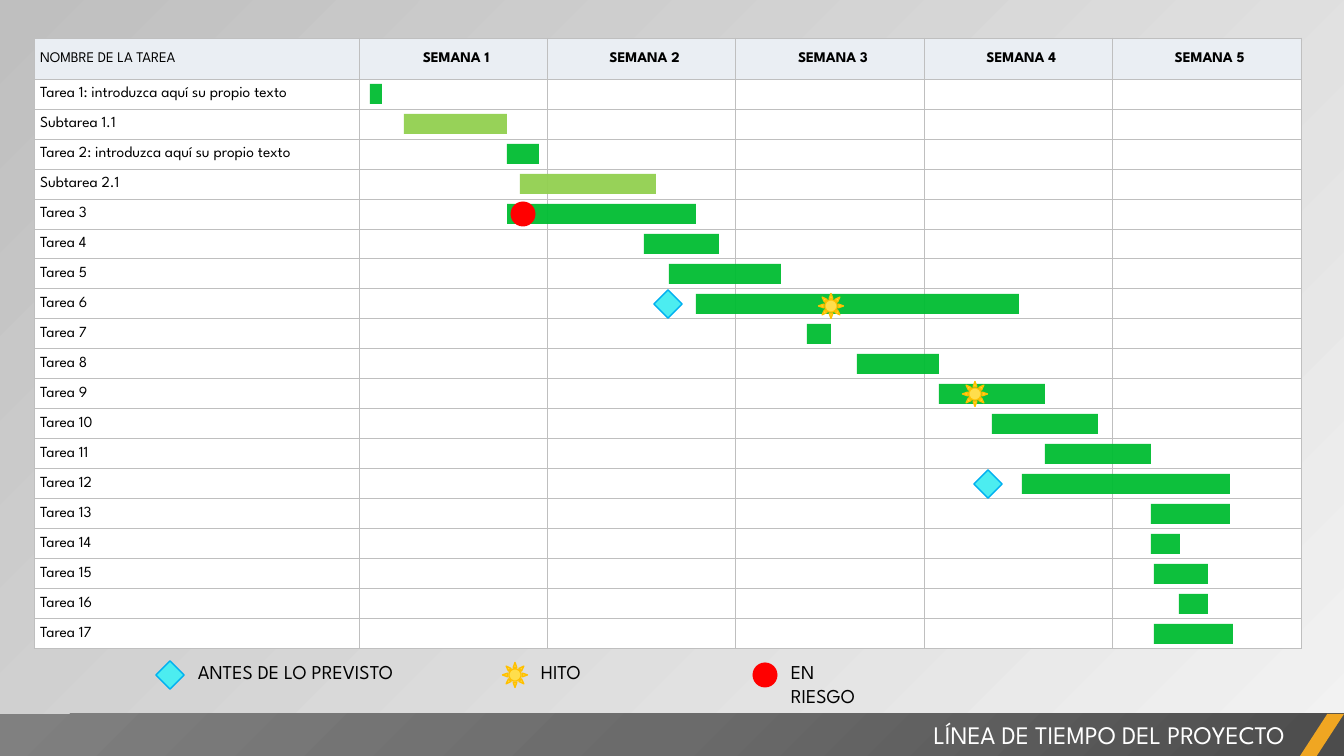
from lxml.etree import SubElement
from pptx import Presentation
from pptx.dml.color import RGBColor
from pptx.enum.shapes import MSO_SHAPE
from pptx.enum.text import MSO_ANCHOR, MSO_AUTO_SIZE, PP_ALIGN
from pptx.oxml import parse_xml
from pptx.oxml.ns import nsdecls, qn
from pptx.util import Emu, Pt

FONT = "League Spartan"
SCALE = 12192000 / 1344  # EMU in one px
LEFT, TOP, HEAD, ROW = 34, 38, 41, 30
NAME, SPAN, WEEKS = 325, 942, 5

HUES = {
    "pale": "F2F2F2", "grey": "BFBFBF", "head": "EAEEF3", "white": "FFFFFF",
    "black": "000000", "task": "00BD32", "sub": "92D050", "early": "4CEDF0",
    "edge": "00B0F0", "sun": "FFDE4C", "ray": "FFC000", "risk": "FF0000",
    "dark": "4C4C4C", "mid": "6B6B6B", "light": "808080", "gold": "F0A622",
}

# Name, bar start and bar width
TASKS = [
    ("Tarea 1: introduzca aquí su propio texto", 370, 12),
    ("Subtarea 1.1", 404, 103),
    ("Tarea 2: introduzca aquí su propio texto", 507, 32),
    ("Subtarea 2.1", 520, 136),
    ("Tarea 3", 507, 189),
    ("Tarea 4", 644, 75),
    ("Tarea 5", 669, 112),
    ("Tarea 6", 696, 323),
    ("Tarea 7", 807, 24),
    ("Tarea 8", 857, 82),
    ("Tarea 9", 939, 106),
    ("Tarea 10", 992, 106),
    ("Tarea 11", 1045, 106),
    ("Tarea 12", 1022, 208),
    ("Tarea 13", 1151, 79),
    ("Tarea 14", 1151, 29),
    ("Tarea 15", 1154, 54),
    ("Tarea 16", 1179, 29),
    ("Tarea 17", 1154, 79),
]

# Shape, size, fill and line of each kind of mark
MARKS = {
    "early": (MSO_SHAPE.RECTANGLE, 20, "early", "edge"),
    "goal": (MSO_SHAPE.SUN, 25, "sun", "ray"),
    "risk": (MSO_SHAPE.OVAL, 25, "risk", None),
}

# Mark centres on the chart
SPOTS = [
    ("risk", 523, 214), ("goal", 831, 306), ("goal", 975, 394),
    ("early", 668, 304), ("early", 988, 484),
]

# Mark, its centre, label start, label width and label
KEYS = [
    ("early", 170, 188, 224, "ANTES DE LO PREVISTO"),
    ("goal", 515, 531, 124, "HITO"),
    ("risk", 765, 781, 87, "EN RIESGO"),
]


def px(num):
    return Emu(round(num * SCALE))


def box(*nums):
    return [px(num) for num in nums]


def hue(name):
    return RGBColor.from_string(HUES[name])


def style(para, size, name="black", bold=False, align=PP_ALIGN.LEFT):
    para.alignment = align
    font = para.font
    font.name, font.size, font.bold = FONT, Pt(size), bold
    font.color.rgb = hue(name)


def add_form(slide, kind, place, fill, line=None):
    form = slide.shapes.add_shape(kind, *box(*place))
    form.shadow.inherit = False
    form.fill.solid()
    form.fill.fore_color.rgb = hue(fill)
    if line:
        form.line.color.rgb = hue(line)
        form.line.width = Pt(1)
    else:
        form.line.fill.background()
    return form


def add_bar(slide, row, name, left, width):
    fill = "sub" if name.startswith("Sub") else "task"
    top = TOP + HEAD + row * ROW + 5
    bar = add_form(slide, MSO_SHAPE.RECTANGLE, (left, top, width, 20), fill)
    tint = bar.element.spPr.find(qn("a:solidFill"))[0]
    SubElement(tint, qn("a:alpha"), val="95000")


def add_mark(slide, kind, x, y):
    shape, size, fill, line = MARKS[kind]
    place = (x - size / 2, y - size / 2, size, size)
    add_form(slide, shape, place, fill, line).rotation = 45


def add_label(slide, left, width, text):
    label = slide.shapes.add_textbox(*box(left, 655, width, 34))
    frame = label.text_frame
    frame.word_wrap = True
    frame.auto_size = MSO_AUTO_SIZE.SHAPE_TO_FIT_TEXT
    frame.text = text
    style(frame.paragraphs[0], 14)


def set_cell(cell, text, fill, size, **look):
    cell.margin_left = px(6)
    cell.margin_right = cell.margin_top = cell.margin_bottom = 0
    cell.vertical_anchor = MSO_ANCHOR.MIDDLE
    cell.text = text
    style(cell.text_frame.paragraphs[0], size, **look)
    props = cell._tc.get_or_add_tcPr()
    for side in ("lnL", "lnR", "lnT", "lnB"):
        line = SubElement(props, qn(f"a:{side}"), w=str(Pt(0.5)))
        paint = SubElement(line, qn("a:solidFill"))
        SubElement(paint, qn("a:srgbClr"), val=HUES["grey"])
    cell.fill.solid()
    cell.fill.fore_color.rgb = hue(fill)


def add_grid(slide):
    place = box(LEFT, TOP, NAME + SPAN, HEAD + ROW * len(TASKS))
    grid = slide.shapes.add_table(len(TASKS) + 1, WEEKS + 1, *place).table
    grid.first_row = grid.horz_banding = False
    grid.columns[0].width = px(NAME)
    grid.rows[0].height = px(HEAD)
    set_cell(grid.cell(0, 0), "NOMBRE DE LA TAREA", "head", 10.5)
    for week in range(1, WEEKS + 1):
        grid.columns[week].width = px(SPAN / WEEKS)
        set_cell(grid.cell(0, week), f"SEMANA {week}", "head", 10.5,
                 bold=True, align=PP_ALIGN.CENTER)
    for row, (name, *_) in enumerate(TASKS, 1):
        grid.rows[row].height = px(ROW)
        for col in range(WEEKS + 1):
            set_cell(grid.cell(row, col), "" if col else name, "white", 11)


def add_band(slide):
    band = add_form(slide, MSO_SHAPE.RECTANGLE, (0, 714, 1344, 42), "mid")
    stops = "".join(
        f'<a:gs pos="{pos}"><a:srgbClr val="{HUES[name]}"/></a:gs>'
        for pos, name in ((0, "dark"), (50000, "mid"), (100000, "light")))
    blend = parse_xml(
        f'<a:gradFill {nsdecls("a")}><a:gsLst>{stops}</a:gsLst>'
        '<a:path path="circle"><a:fillToRect l="100000" t="100000"/></a:path>'
        '</a:gradFill>')
    props = band.element.spPr
    props.replace(props.find(qn("a:solidFill")), blend)
    slash = add_form(slide, MSO_SHAPE.PARALLELOGRAM, (1300, 714, 44, 42), "gold")
    slash.adjustments[0] = 0.65


def set_title(slide, text):
    title = slide.shapes.title
    title.left, title.top, title.width, title.height = box(282, 714, 1013, 40)
    frame = title.text_frame
    frame.text = text
    frame.word_wrap = True
    frame.auto_size = MSO_AUTO_SIZE.NONE
    frame.vertical_anchor = MSO_ANCHOR.TOP
    style(frame.paragraphs[0], 18, "white", align=PP_ALIGN.RIGHT)
    slide.shapes.element.append(title.element)  # in front of the band


def set_back(slide):
    fill = slide.background.fill
    fill.gradient()
    fill.gradient_angle = 135
    for stop, name in zip(fill.gradient_stops, ("pale", "grey")):
        stop.color.rgb = hue(name)


def main():
    deck = Presentation()
    deck.slide_width, deck.slide_height = box(1344, 756)
    slide = deck.slides.add_slide(deck.slide_layouts[5])
    set_back(slide)

    # Chart
    add_grid(slide)
    for row, task in enumerate(TASKS):
        add_bar(slide, row, *task)
    for spot in SPOTS:
        add_mark(slide, *spot)

    # Legend
    for kind, x, left, width, text in KEYS:
        add_mark(slide, kind, x, 675)
        add_label(slide, left, width, text)

    # Title band
    add_band(slide)
    set_title(slide, "LÍNEA DE TIEMPO DEL PROYECTO")
    deck.save("out.pptx")


if __name__ == "__main__":
    main()
